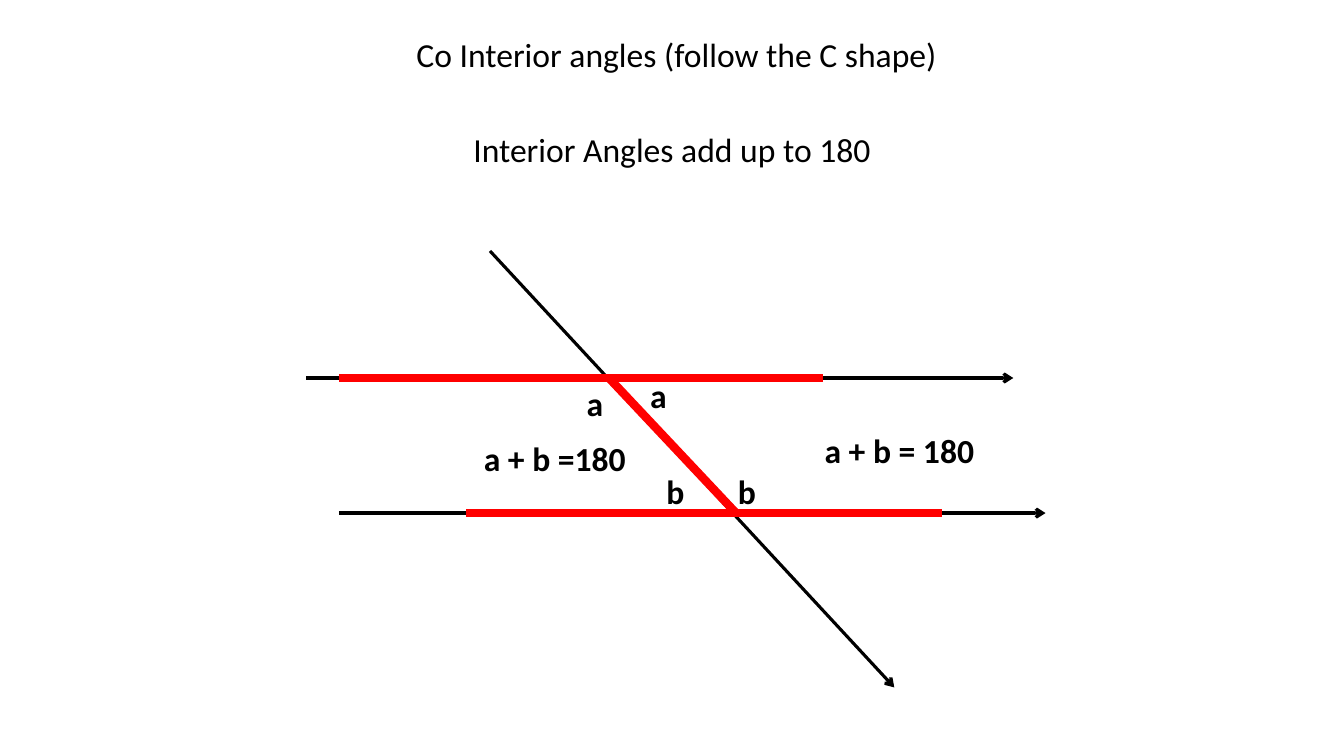
from lxml import etree
from pptx import Presentation
from pptx.dml.color import RGBColor
from pptx.enum.shapes import MSO_CONNECTOR
from pptx.enum.text import MSO_AUTO_SIZE, PP_ALIGN
from pptx.oxml.ns import qn
from pptx.util import Inches, Pt

STRAIGHT = MSO_CONNECTOR.STRAIGHT
FIT_SHAPE = MSO_AUTO_SIZE.SHAPE_TO_FIT_TEXT
CENTER, LEFT = PP_ALIGN.CENTER, PP_ALIGN.LEFT
BLACK = RGBColor(0, 0, 0)
RED = RGBColor(255, 0, 0)
FONT = "Calibri"
TEXT_SIZE = 24
TEXT_HEIGHT = 0.5

UPPER, LOWER = 3.75, 5.09
UPPER_CROSSING = (6.04, UPPER)
LOWER_CROSSING = (7.3, LOWER)

ARROWS = [
    ((3.36, LOWER), (10.37, LOWER)),
    ((3.04, UPPER), (10.05, UPPER)),
    ((4.86, 2.49), (8.87, 6.82)),
]
C_SHAPE_STROKES = [
    (LOWER_CROSSING, UPPER_CROSSING),
    (UPPER_CROSSING, (3.36, UPPER)),
    (LOWER_CROSSING, (4.62, LOWER)),
    ((8.16, UPPER), UPPER_CROSSING),
    ((9.34, LOWER), (7.22, LOWER)),
]
ANGLE_LABELS = [
    ("a", 5.72, 3.75, 0.37),
    ("b", 6.51, 4.62, 0.38),
    ("a + b =180", 4.7, 4.3, 1.62),
    ("a", 6.35, 3.67, 0.37),
    ("a + b = 180", 8.08, 4.22, 1.7),
    ("b", 7.22, 4.62, 0.38),
]
HEADINGS = [
    ("Co Interior angles (follow the C shape)", 2.18, 0.29, 9.06),
    ("Interior Angles add up to 180", 2.1, 1.23, 9.13),
]


def add_line(page, start, end, color, width, arrow=False):
    line = page.shapes.add_connector(
        STRAIGHT, *(Inches(value) for value in start + end))
    line.line.color.rgb = color
    line.line.width = Pt(width)
    if arrow:
        outline = line.line._get_or_add_ln()
        etree.SubElement(outline, qn("a:tailEnd"), type="arrow")
    etree.SubElement(line._element.spPr, qn("a:effectLst"))


def add_text(page, text, left, top, width, heading):
    box = page.shapes.add_textbox(
        *(Inches(value) for value in (left, top, width, TEXT_HEIGHT)))
    frame = box.text_frame
    frame.word_wrap = heading
    frame.auto_size = FIT_SHAPE
    para = frame.paragraphs[0]
    para.text = text
    para.alignment = CENTER if heading else LEFT
    para.font.name = FONT
    para.font.size = Pt(TEXT_SIZE)
    para.font.bold = not heading
    para.font.color.rgb = BLACK


def main():
    deck = Presentation()
    deck.slide_width, deck.slide_height = Inches(13.33), Inches(7.5)
    page = deck.slides.add_slide(deck.slide_layouts[6])
    for start, end in ARROWS:
        add_line(page, start, end, BLACK, 2.25, arrow=True)
    for start, end in C_SHAPE_STROKES:
        add_line(page, start, end, RED, 6)
    for label in ANGLE_LABELS:
        add_text(page, *label, heading=False)
    for heading in HEADINGS:
        add_text(page, *heading, heading=True)
    deck.save("out.pptx")


if __name__ == "__main__":
    main()
